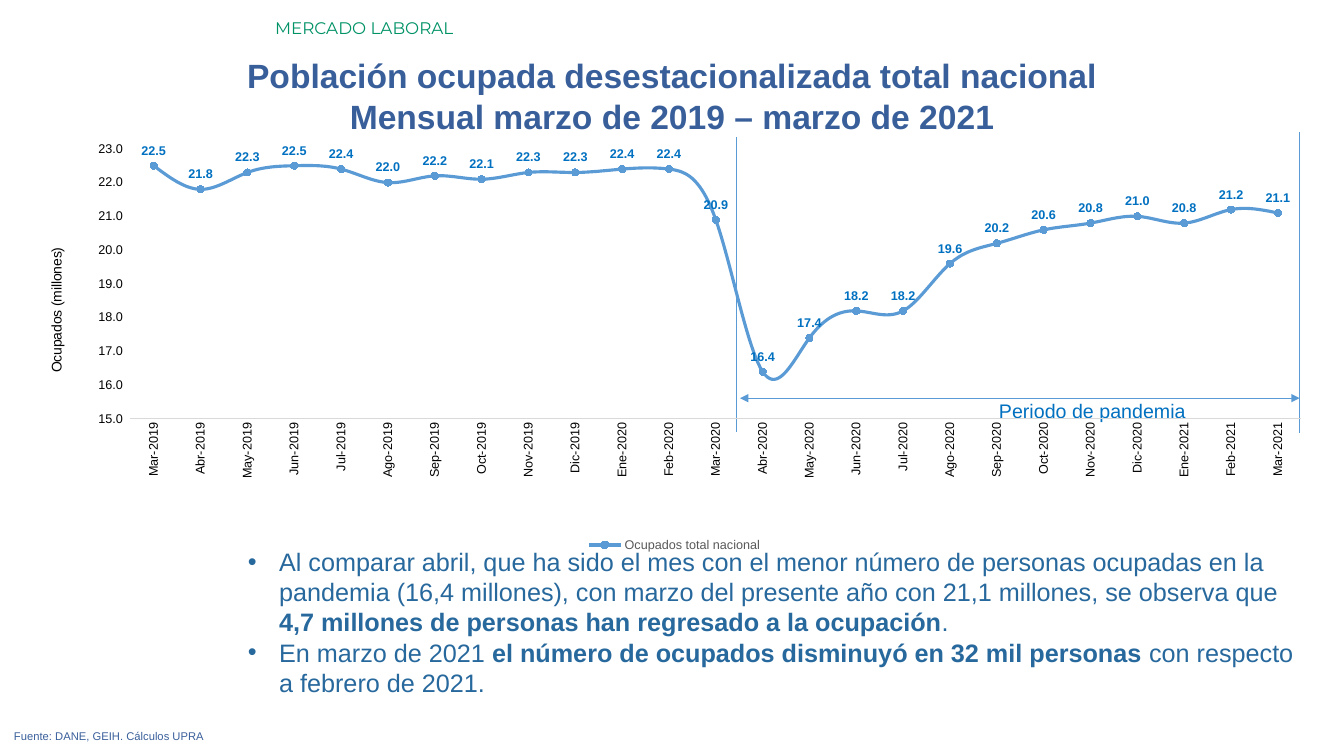
from lxml import etree
from pptx import Presentation
from pptx import util as u
from pptx.chart.data import CategoryChartData
from pptx.dml.color import RGBColor
from pptx.enum import chart as ch, shapes, text
from pptx.oxml import parse_xml
from pptx.oxml.ns import qn

COLORS = {
    "green": "009267", "navy": "395F9B", "body": "27689D", "label": "0070C0",
    "series": "5B9BD5", "axis": "D9D9D9", "legend": "595959", "black": "000000",
}
NUMBER_FORMAT = '_-* #,##0.0_-;\\-* #,##0.0_-;_-* "-"??_-;'
MONTHS = ["Ene", "Feb", "Mar", "Abr", "May", "Jun", "Jul", "Ago", "Sep", "Oct", "Nov", "Dic"]
EMPLOYED = [22.5, 21.8, 22.3, 22.5, 22.4, 22, 22.2, 22.1, 22.3, 22.3, 22.4, 22.4, 20.9,
            16.4, 17.4, 18.2, 18.2, 19.6, 20.2, 20.6, 20.8, 21, 20.8, 21.2, 21.1]
FINDINGS = [
    [("Al comparar abril, que ha sido el mes con el menor número de personas ocupadas en la "
      "pandemia (16,4 millones), con marzo del presente año con 21,1 millones, se observa que ", False),
     ("4,7 millones de personas han regresado a la ocupación", True), (".", False)],
    [("En marzo de 2021 ", False),
     ("el número de ocupados disminuyó en 32 mil personas ", True),
     ("con respecto a febrero de 2021.", False)],
]


def color(name):
    return RGBColor.from_string(COLORS[name])


def style_font(font, size, color_name, bold=False, name="Arial"):
    font.size = u.Pt(size)
    font.name = name
    font.bold = bold
    font.color.rgb = color(color_name)


def add_text(slide, box, paragraphs, size, color_name, align=text.PP_ALIGN.LEFT,
             name="Arial", bullet=False):
    shape = slide.shapes.add_textbox(*map(u.Inches, box))
    frame = shape.text_frame
    frame.word_wrap = True
    for index, runs in enumerate(paragraphs):
        paragraph = frame.paragraphs[0] if index == 0 else frame.add_paragraph()
        paragraph.alignment = align
        if bullet:
            properties = paragraph._p.get_or_add_pPr()
            properties.set("marL", str(u.Inches(0.31)))
            properties.set("indent", str(u.Inches(-0.31)))
            font = etree.SubElement(properties, qn("a:buFont"))
            font.set("typeface", "Arial")
            etree.SubElement(properties, qn("a:buChar")).set("char", "•")
        for words, bold in runs:
            run = paragraph.add_run()
            run.text = words
            style_font(run.font, size, color_name, bold, name)


def add_line(slide, start, end, arrows=False):
    line = slide.shapes.add_connector(
        shapes.MSO_CONNECTOR.STRAIGHT, *map(u.Inches, start + end))
    line.line.color.rgb = color("series")
    line.line.width = u.Pt(0.5)
    if arrows:
        outline = line.line._get_or_add_ln()
        for tag in ("a:headEnd", "a:tailEnd"):
            etree.SubElement(outline, qn(tag)).set("type", "triangle")
    etree.SubElement(line._element.spPr, qn("a:effectLst"))


def add_header(slide, box):
    left, top, width, height = box
    add_text(slide, (left + 2.63, top + 0.13, width - 2.63, 0.3),
             [[("MERCADO LABORAL", False)]], 12, "green", name="Montserrat")
    add_text(slide, (left, top + 0.5, width, height - 0.5),
             [[("Población ocupada desestacionalizada total nacional", True)],
              [("Mensual marzo de 2019 – marzo de 2021", True)]],
             24, "navy", text.PP_ALIGN.CENTER)


def add_pandemic_period(slide, box):
    left, top, width, height = box
    right, bottom = left + width, top + height
    add_line(slide, (left, top + 0.05), (left, bottom - 0.01))
    add_line(slide, (right, top), (right, bottom))
    add_line(slide, (left + 0.04, bottom - 0.35), (right, bottom - 0.35), arrows=True)
    add_text(slide, (left + 2.51, bottom - 0.39, 2.63, 0.34),
             [[("Periodo de pandemia", False)]], 14, "label")


def set_plot_layout(chart, x, y, width, height):
    plot_area = chart._chartSpace.chart.plotArea
    for layout in plot_area.findall(qn("c:layout")):
        plot_area.remove(layout)
    layout = etree.Element(qn("c:layout"))
    manual = etree.SubElement(layout, qn("c:manualLayout"))
    settings = [("layoutTarget", "inner"), ("xMode", "edge"), ("yMode", "edge"),
                ("x", x), ("y", y), ("w", width), ("h", height)]
    for tag, value in settings:
        etree.SubElement(manual, qn("c:" + tag)).set("val", str(value))
    plot_area.insert(0, layout)


def style_axes(chart):
    for axis in (chart.category_axis, chart.value_axis):
        axis.has_major_gridlines = False
        axis.major_tick_mark = axis.minor_tick_mark = ch.XL_TICK_MARK.NONE
        style_font(axis.tick_labels.font, 9, "black")
    months = chart.category_axis
    months.format.line.color.rgb = color("axis")
    months.format.line.width = u.Pt(0.75)
    months._element.txPr.bodyPr.set("rot", "-5400000")
    months._element.txPr.bodyPr.set("vert", "horz")
    values = chart.value_axis
    values.minimum_scale, values.maximum_scale, values.major_unit = 15, 23, 1
    values.format.line.fill.background()
    values.tick_labels.number_format = NUMBER_FORMAT
    values.tick_labels.number_format_is_linked = False
    title = values.axis_title.text_frame
    title.text = "Ocupados (millones)"
    style_font(title.paragraphs[0].runs[0].font, 10, "black")


def style_series(series):
    series.smooth = True
    series.format.line.color.rgb = color("series")
    series.format.line.width = u.Pt(2.25)
    marker = series.marker
    marker.style = ch.XL_MARKER_STYLE.CIRCLE
    marker.size = 5
    marker.format.fill.solid()
    marker.format.fill.fore_color.rgb = color("series")
    marker.format.line.color.rgb = color("series")
    labels = series.data_labels
    labels.show_value = True
    labels.position = ch.XL_LABEL_POSITION.ABOVE
    labels.number_format = NUMBER_FORMAT
    labels.number_format_is_linked = False
    style_font(labels.font, 9, "label", True)


def add_employment_chart(slide, box):
    data = CategoryChartData()
    data.categories = [f"{MONTHS[m % 12]}-{2019 + m // 12}" for m in range(2, 2 + len(EMPLOYED))]
    data.add_series("Ocupados total nacional", EMPLOYED)
    chart = slide.shapes.add_chart(
        ch.XL_CHART_TYPE.LINE_MARKERS, *map(u.Inches, box), data).chart
    style_font(chart.font, 10, "black")
    chart.has_title = False
    chart.has_legend = True
    chart.legend.position = ch.XL_LEGEND_POSITION.BOTTOM
    chart.legend.include_in_layout = False
    style_font(chart.legend.font, 9, "legend")
    chart.plots[0].vary_by_categories = False
    style_axes(chart)
    style_series(chart.plots[0].series[0])
    set_plot_layout(chart, 0.079, 0.051, 0.906, 0.629)


def main():
    presentation = Presentation()
    presentation.slide_width = u.Inches(13.33)
    presentation.slide_height = u.Inches(7.5)
    slide = presentation.slides.add_slide(presentation.slide_layouts[6])
    add_header(slide, (0, 0, 13.33, 1.41))
    add_text(slide, (0.04, 7.19, 12.91, 0.24),
             [[("Fuente: DANE, GEIH. Cálculos UPRA", False)]], 8, "navy", text.PP_ALIGN.JUSTIFY)
    add_pandemic_period(slide, (7.3, 1.31, 5.59, 2.99))
    add_text(slide, (2.36, 5.37, 10.71, 1.62), FINDINGS, 18, "body", bullet=True)
    add_employment_chart(slide, (0.28, 1.26, 12.82, 4.26))
    presentation.save("out.pptx")


if __name__ == "__main__":
    main()
